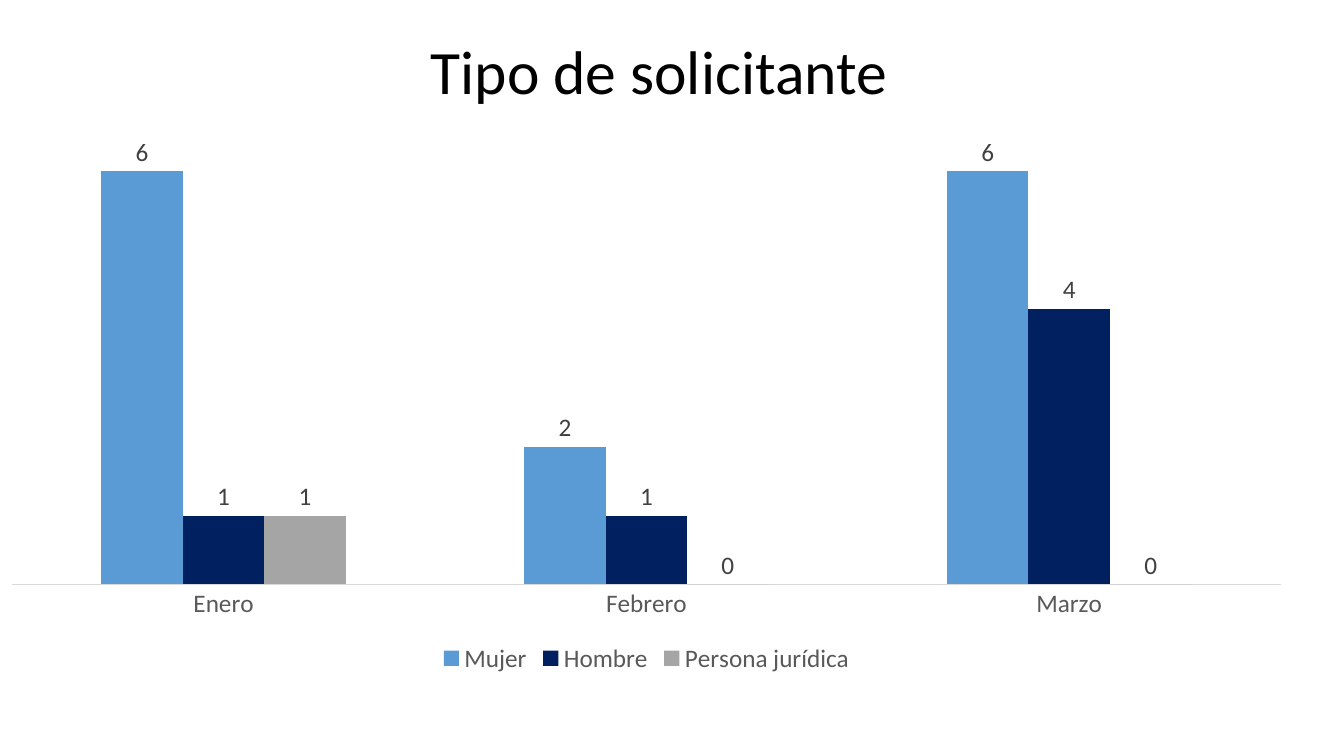
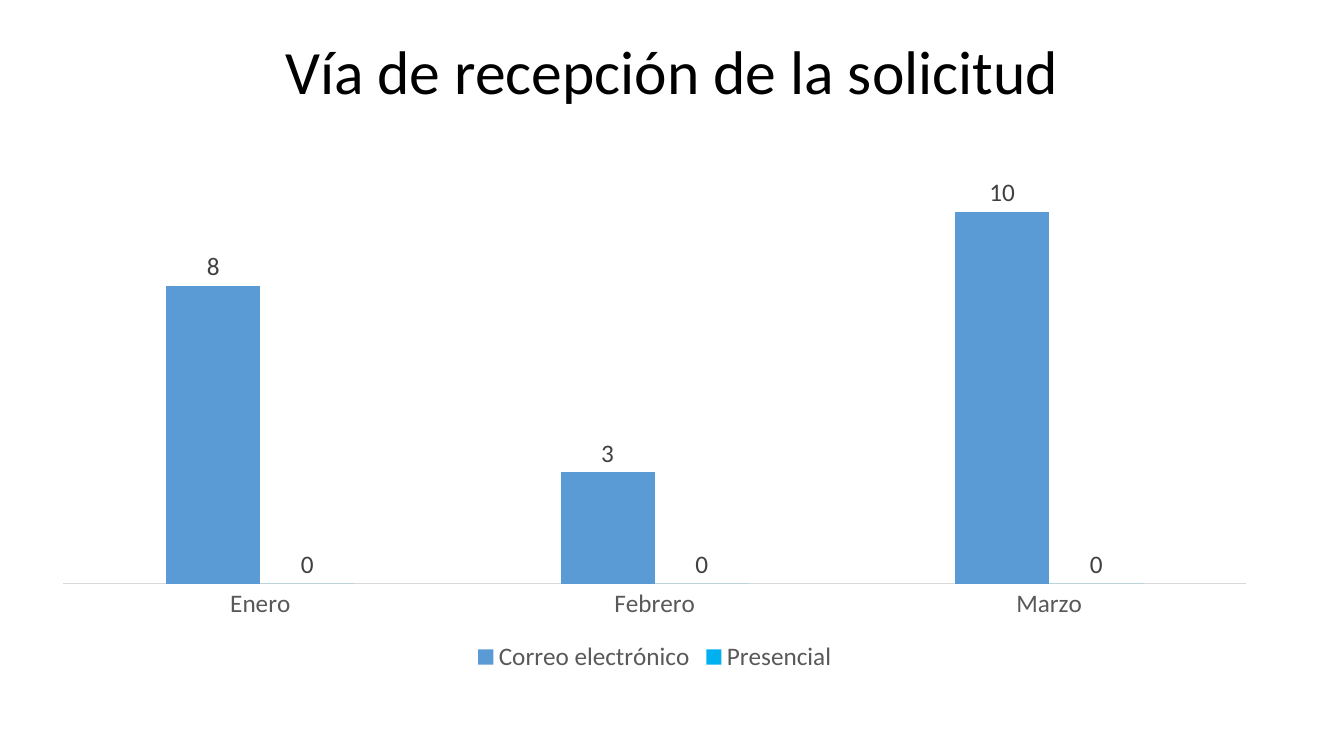
from dataclasses import dataclass

from pptx import Presentation
from pptx.chart.data import CategoryChartData
from pptx.dml.color import RGBColor
from pptx.enum.chart import XL_CHART_TYPE, XL_LABEL_POSITION, XL_LEGEND_POSITION, XL_TICK_MARK
from pptx.enum.text import MSO_ANCHOR, MSO_AUTO_SIZE, PP_ALIGN
from pptx.util import Cm, Pt


@dataclass(frozen=True)
class Theme:
    font: str = "Calibri"
    title_size: int = 44
    chart_size: int = 18
    title: str = "000000"
    label: str = "404040"
    muted: str = "595959"
    axis: str = "D9D9D9"
    blue: str = "5B9BD5"
    navy: str = "002060"
    gray: str = "A5A5A5"
    cyan: str = "00B0F0"


class Deck:
    """Builds slides with a title and a column chart in one shared style."""

    def __init__(self, prs, theme):
        self.prs = prs
        self.theme = theme
        self.s = None

    def style(self, font, size, color):
        font.name = self.theme.font
        font.size = Pt(size)
        font.color.rgb = RGBColor.from_string(color)

    def add_slide(self):
        self.s = self.prs.slides.add_slide(self.prs.slide_layouts[5])

    def add_title(self, text, left):
        sp = self.s.shapes.title
        sp.left, sp.top, sp.width, sp.height = Cm(left), Cm(0.05), Cm(29.21), Cm(3.68)
        tf = sp.text_frame
        tf.text = text
        tf.word_wrap = True
        tf.auto_size = MSO_AUTO_SIZE.NONE
        tf.vertical_anchor = MSO_ANCHOR.MIDDLE
        p = tf.paragraphs[0]
        p.alignment = PP_ALIGN.CENTER
        p.line_spacing = 0.9
        self.style(p.runs[0].font, self.theme.title_size, self.theme.title)

    def add_columns(self, box, categories, series, maximum):
        t = self.theme
        data = CategoryChartData(number_format="0")
        data.categories = categories
        for name, values, _ in series:
            data.add_series(name, values)
        frame = self.s.shapes.add_chart(
            XL_CHART_TYPE.COLUMN_CLUSTERED, *(Cm(v) for v in box), data)
        chart = frame.chart
        chart.has_title = False
        self.style(chart.font, t.chart_size, t.title)

        chart.has_legend = True
        chart.legend.position = XL_LEGEND_POSITION.BOTTOM
        chart.legend.include_in_layout = False
        self.style(chart.legend.font, t.chart_size, t.muted)

        axis = chart.category_axis
        axis.major_tick_mark = axis.minor_tick_mark = XL_TICK_MARK.NONE
        axis.format.line.color.rgb = RGBColor.from_string(t.axis)
        axis.format.line.width = Pt(0.75)
        self.style(axis.tick_labels.font, t.chart_size, t.muted)

        axis = chart.value_axis
        axis.visible = False
        axis.has_major_gridlines = False
        axis.minimum_scale, axis.maximum_scale = 0, maximum

        plot = chart.plots[0]
        plot.gap_width = 219
        plot.vary_by_categories = False
        for ser, (_, _, color) in zip(plot.series, series):
            ser.format.fill.solid()
            ser.format.fill.fore_color.rgb = RGBColor.from_string(color)
            labels = ser.data_labels
            labels.show_value = True
            labels.position = XL_LABEL_POSITION.OUTSIDE_END
            self.style(labels.font, t.chart_size, t.label)


def main():
    prs = Presentation()
    prs.slide_width, prs.slide_height = Cm(33.87), Cm(19.05)
    theme = Theme()
    deck = Deck(prs, theme)
    months = ["Enero", "Febrero", "Marzo"]

    deck.add_slide()
    deck.add_title("Tipo de solicitante", 2.01)
    deck.add_columns((-0.36, 2.29, 33.3, 14.81), months, [
        ("Mujer", (6, 2, 6), theme.blue),
        ("Hombre", (1, 1, 4), theme.navy),
        ("Persona jurídica", (1, 0, 0), theme.gray),
    ], 7)

    deck.add_slide()
    deck.add_title("Vía de recepción de la solicitud", 2.34)
    deck.add_columns((0.97, 3.18, 31.06, 13.89), months, [
        ("Correo electrónico", (8, 3, 10), theme.blue),
        ("Presencial", (0, 0, 0), theme.cyan),
    ], 12)

    prs.save("out.pptx")


if __name__ == "__main__":
    main()
